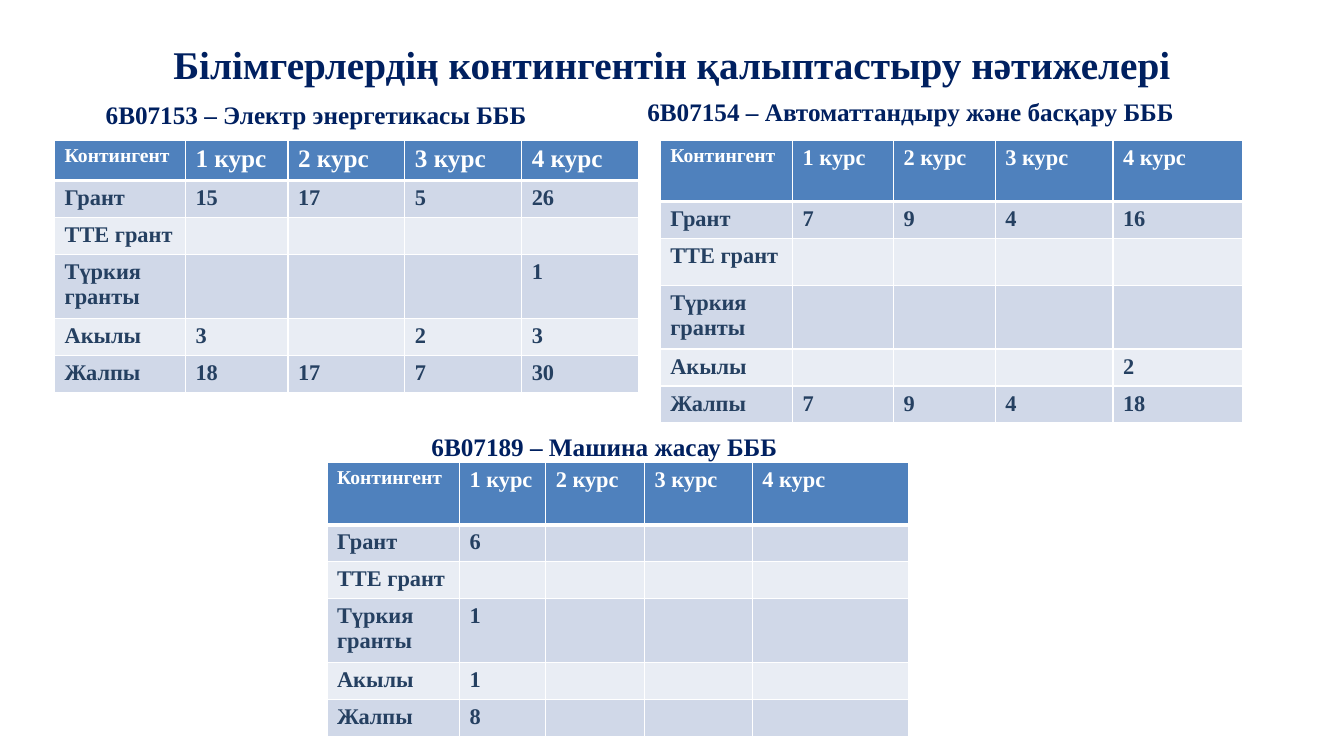
from dataclasses import dataclass

from lxml.etree import SubElement
from pptx import Presentation
from pptx.dml.color import RGBColor
from pptx.enum.text import MSO_ANCHOR, MSO_AUTO_SIZE, PP_ALIGN
from pptx.oxml.ns import qn
from pptx.slide import Slide
from pptx.table import _Cell
from pptx.text.text import TextFrame
from pptx.util import Pt

FONT = "Times New Roman"
NAVY, TEXT, WHITE = "002060", "254061", "FFFFFF"
HEADER_FILL, BAND_FILLS = "4F81BD", ("D0D8E8", "E9EDF4")
BODY_SIZE, FIRST_HEADER_SIZE = 16, 14
HEADERS = ["Контингент", "1 курс", "2 курс", "3 курс", "4 курс"]
ROW_LABELS = ["Грант", "ТТЕ грант", "Түркия гранты", "Акылы", "Жалпы"]


@dataclass
class Label:
    text: str
    left: float
    top: float
    width: float
    height: float = 29
    size: float = 18
    align: PP_ALIGN = PP_ALIGN.CENTER


@dataclass
class Contingent:
    left: float
    top: float
    columns: list[float]
    rows: list[float]
    header_size: float
    values: list[list[str]]


LABELS = [
    Label("Білімгерлердің контингентін қалыптастыру нәтижелері",
          111.6, 25.2, 736.6, 40.3, 28),
    Label("6В07153 – Электр энергетикасы БББ", 68.4, 67.7, 330.5, align=PP_ALIGN.LEFT),
    Label("6В07154 – Автоматтандыру және басқару БББ", 444.2, 65.5, 412.6),
    Label("6В07189 – Машина жасау БББ", 225.4, 304.6, 412.6),
]

EMPTY_ROW = ["", "", "", ""]
CONTINGENTS = [
    Contingent(39, 100, [93.5, 73.2, 83.5, 83.5, 83.2], [27, 24.8, 24.8, 42.5, 24.8, 24.8], 18, [
        ["15", "17", "5", "26"], EMPTY_ROW, ["", "", "", "1"],
        ["3", "", "2", "3"], ["18", "17", "7", "30"]]),
    Contingent(471.6, 100, [94.6, 72, 72.8, 84, 92.4], [44, 25.1, 33.3, 43.7, 25.3, 25.3], 16, [
        ["7", "9", "4", "16"], EMPTY_ROW, EMPTY_ROW,
        ["", "", "", "2"], ["7", "9", "4", "18"]]),
    Contingent(233.6, 330.3, [94.6, 61.6, 70.6, 77, 111.8], [44.6, 26.2, 26.4, 45.2, 26.4, 26.4], 16, [
        ["6", "", "", ""], EMPTY_ROW, ["1", "", "", ""],
        ["1", "", "", ""], ["8", "", "", ""]]),
]


def color(value: str) -> RGBColor:
    return RGBColor.from_string(value)


def write(text_frame: TextFrame, text: str, size: float, ink: str) -> None:
    text_frame.text = text
    paragraph = text_frame.paragraphs[0]
    for run in paragraph.runs:
        run.font.name = FONT
        run.font.size = Pt(size)
        run.font.bold = True
        run.font.color.rgb = color(ink)
    if not text:
        # An empty cell keeps the row's text height
        SubElement(paragraph._p, qn("a:endParaRPr"), sz=str(size * 100))


def add_label(slide: Slide, label: Label, anchor: MSO_ANCHOR) -> None:
    shape = slide.shapes.add_textbox(
        Pt(label.left), Pt(label.top), Pt(label.width), Pt(label.height))
    text_frame = shape.text_frame
    text_frame.word_wrap = True
    text_frame.vertical_anchor = anchor
    if anchor == MSO_ANCHOR.TOP:
        text_frame.auto_size = MSO_AUTO_SIZE.SHAPE_TO_FIT_TEXT
    write(text_frame, label.text, label.size, NAVY)
    text_frame.paragraphs[0].alignment = label.align


def style_cell(cell: _Cell, fill: str, top: float, bottom: float) -> None:
    # Borders precede the fill in the cell properties
    properties = cell._tc.get_or_add_tcPr()
    for side, width in (("L", 1), ("R", 1), ("T", top), ("B", bottom)):
        border = SubElement(properties, qn(f"a:ln{side}"), w=str(Pt(width)))
        SubElement(SubElement(border, qn("a:solidFill")), qn("a:srgbClr"), val=WHITE)
    cell.fill.solid()
    cell.fill.fore_color.rgb = color(fill)


def add_contingent(slide: Slide, contingent: Contingent) -> None:
    grid = [HEADERS] + [[name, *values] for name, values in zip(ROW_LABELS, contingent.values)]
    table = slide.shapes.add_table(
        len(grid), len(HEADERS), Pt(contingent.left), Pt(contingent.top),
        Pt(sum(contingent.columns)), Pt(sum(contingent.rows))).table
    for column, width in zip(table.columns, contingent.columns):
        column.width = Pt(width)
    for row, height in zip(table.rows, contingent.rows):
        row.height = Pt(height)
    for i, texts in enumerate(grid):
        for j, text in enumerate(texts):
            cell = table.cell(i, j)
            if i == 0:
                size = contingent.header_size if j else FIRST_HEADER_SIZE
                write(cell.text_frame, text, size, WHITE)
                style_cell(cell, HEADER_FILL, 1, 3)
            else:
                write(cell.text_frame, text, BODY_SIZE, TEXT)
                style_cell(cell, BAND_FILLS[(i - 1) % 2], 3 if i == 1 else 1, 1)


def main() -> None:
    presentation = Presentation()
    presentation.slide_width, presentation.slide_height = Pt(960), Pt(540)
    slide = presentation.slides.add_slide(presentation.slide_layouts[6])

    # Title and programme captions
    title, *captions = LABELS
    add_label(slide, title, MSO_ANCHOR.MIDDLE)
    for caption in captions:
        add_label(slide, caption, MSO_ANCHOR.TOP)

    # Contingent tables
    for contingent in CONTINGENTS:
        add_contingent(slide, contingent)

    presentation.save("out.pptx")


if __name__ == "__main__":
    main()
